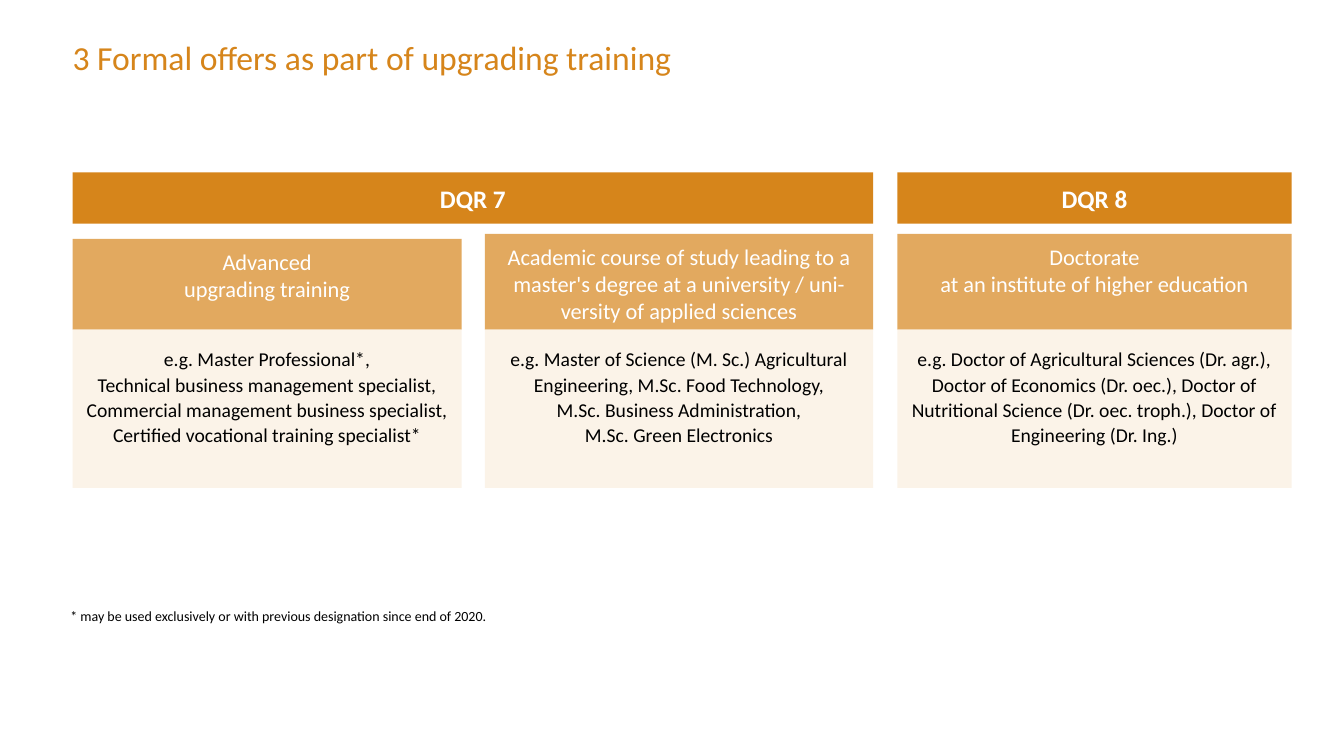
from dataclasses import dataclass

from pptx import Presentation
from pptx.dml.color import RGBColor
from pptx.enum.shapes import MSO_SHAPE
from pptx.enum.text import MSO_ANCHOR, MSO_AUTO_SIZE, PP_ALIGN
from pptx.slide import Slide
from pptx.text.text import TextFrame
from pptx.util import Inches, Pt

RECT = MSO_SHAPE.RECTANGLE
TOP, MIDDLE = MSO_ANCHOR.TOP, MSO_ANCHOR.MIDDLE
LEFT, CENTER = PP_ALIGN.LEFT, PP_ALIGN.CENTER
FIXED = MSO_AUTO_SIZE.NONE

COLORS = {"dark": "D6851B", "mid": "E2A95F", "pale": "FBF3E8",
          "white": "FFFFFF", "black": "000000"}
FONT = "Calibri"
MARGIN = 0.72
LEVEL_TOP, LEVEL_HIGH = 1.71, 0.51
BODY_TOP, BODY_HIGH = 3.27, 1.57


@dataclass(frozen=True)
class Style:
    fill: str
    ink: str
    size: int
    insets: tuple[float, float, float]  # sides, top, bottom
    anchor: MSO_ANCHOR = TOP
    leading: int | None = None
    bold: bool = False


@dataclass(frozen=True)
class Level:
    name: str
    left: float
    width: float


@dataclass(frozen=True)
class Offer:
    left: float
    top: float
    width: float
    name: str
    samples: str


LEVEL = Style("dark", "white", 18, (0.04, 0.08, 0), MIDDLE, 17, True)
HEAD = Style("mid", "white", 16, (0.04, 0.09, 0))
BODY = Style("pale", "black", 14, (0.08, 0.16, 0.16), leading=18)

LEVELS = [Level("DQR 7", MARGIN, 7.94), Level("DQR 8", 8.9, 3.91)]
OFFERS = [
    Offer(MARGIN, 2.37, 3.86, "Advanced\nupgrading training",
          "e.g. Master Professional*,\n"
          "Technical business management specialist,\n"
          "Commercial management business specialist,\n"
          "Certified vocational training specialist*"),
    Offer(4.81, 2.32, 3.85,
          "Academic course of study leading to a master's degree "
          "at a university / uni-versity of applied sciences",
          "e.g. Master of Science (M. Sc.) Agricultural Engineering, "
          "M.Sc. Food Technology,\nM.Sc. Business Administration,\n"
          "M.Sc. Green Electronics"),
    Offer(8.9, 2.32, 3.91, "Doctorate\nat an institute of higher education",
          "e.g. Doctor of Agricultural Sciences (Dr. agr.), "
          "Doctor of Economics (Dr. oec.), Doctor of Nutritional Science "
          "(Dr. oec. troph.), Doctor of Engineering (Dr. Ing.)"),
]


def color(name: str) -> RGBColor:
    return RGBColor.from_string(COLORS[name])


def write(frame: TextFrame, text: str, size: int, ink: str,
          align: PP_ALIGN = LEFT, bold: bool = False) -> None:
    """Fill the frame with one paragraph; newlines become line breaks."""
    frame.word_wrap = True
    frame.auto_size = FIXED
    para = frame.paragraphs[0]
    para.text = text
    para.alignment = align
    para.font.name = FONT
    para.font.size = Pt(size)
    para.font.bold = bold
    para.font.color.rgb = color(ink)


def inset(frame: TextFrame, side: float, top: float, bottom: float) -> None:
    frame.margin_left = frame.margin_right = Inches(side)
    frame.margin_top, frame.margin_bottom = Inches(top), Inches(bottom)


def add_box(slide: Slide, left: float, top: float, width: float,
            height: float, text: str, style: Style) -> None:
    box = slide.shapes.add_shape(RECT, Inches(left), Inches(top),
                                 Inches(width), Inches(height))
    box.shadow.inherit = False
    box.fill.solid()
    box.fill.fore_color.rgb = color(style.fill)
    box.line.fill.background()
    frame = box.text_frame
    frame.vertical_anchor = style.anchor
    inset(frame, *style.insets)
    write(frame, text, style.size, style.ink, CENTER, style.bold)
    if style.leading:
        frame.paragraphs[0].line_spacing = Pt(style.leading)


def add_title(slide: Slide, text: str) -> None:
    title = slide.shapes.title
    title.left, title.top = Inches(MARGIN), Inches(0.32)
    title.width, title.height = Inches(9.84), Inches(0.49)
    title.text_frame.vertical_anchor = MIDDLE
    inset(title.text_frame, 0, 0, 0)
    write(title.text_frame, text, 24, "dark")


def add_note(slide: Slide, text: str) -> None:
    note = slide.shapes.add_textbox(Inches(0.6), Inches(5.98),
                                    Inches(8.14), Inches(0.27))
    write(note.text_frame, text, 10, "black")


def main() -> None:
    deck = Presentation()
    deck.slide_width, deck.slide_height = Inches(13.33), Inches(7.5)
    slide = deck.slides.add_slide(deck.slide_layouts.get_by_name("Title Only"))
    add_title(slide, "3 Formal offers as part of upgrading training")
    for level in LEVELS:
        add_box(slide, level.left, LEVEL_TOP, level.width, LEVEL_HIGH,
                level.name, LEVEL)
    for offer in OFFERS:
        add_box(slide, offer.left, offer.top, offer.width,
                BODY_TOP - offer.top, offer.name, HEAD)
        add_box(slide, offer.left, BODY_TOP, offer.width, BODY_HIGH,
                offer.samples, BODY)
    add_note(slide, "* may be used exclusively or with previous designation "
                    "since end of 2020.")
    deck.save("out.pptx")


if __name__ == "__main__":
    main()
